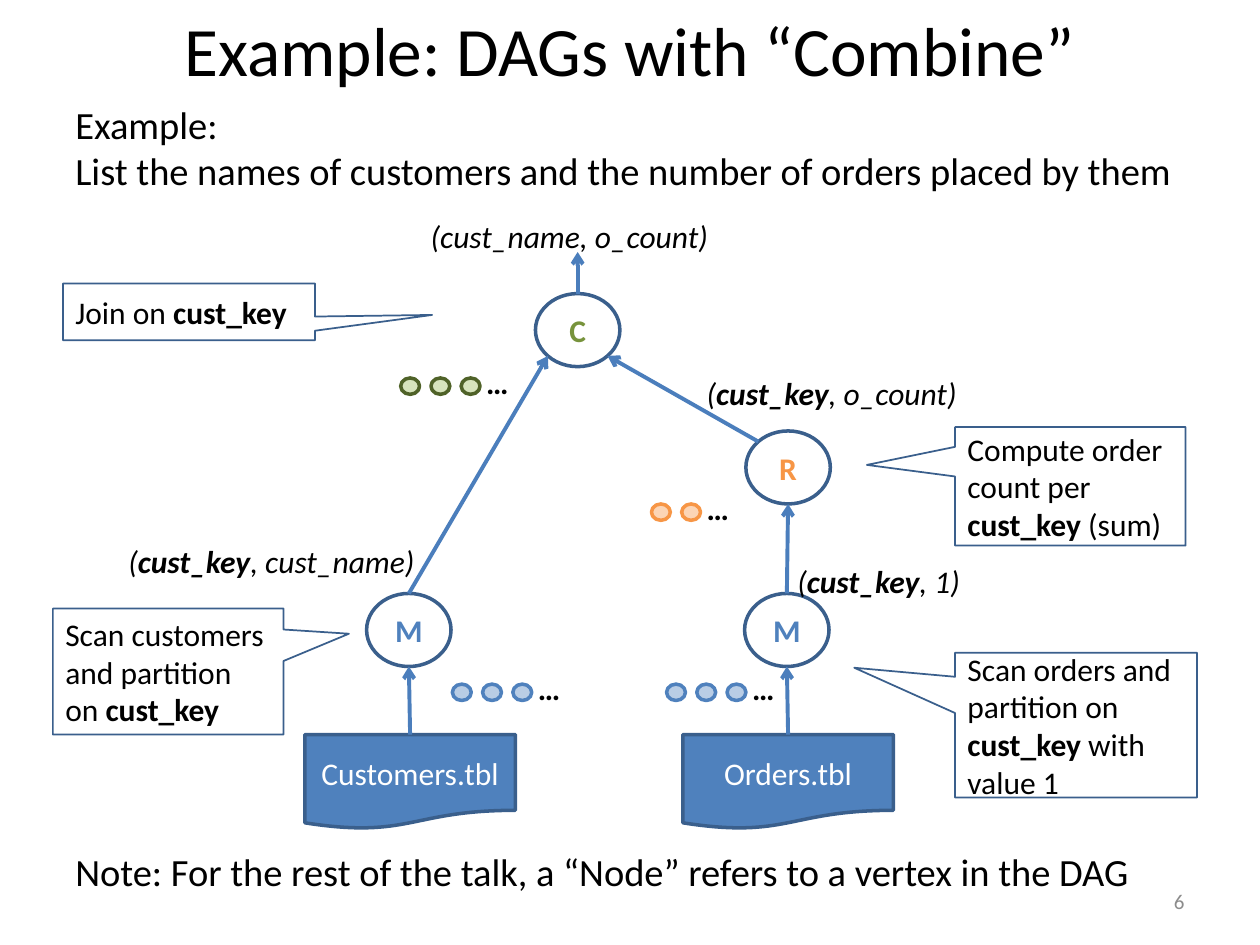
from dataclasses import dataclass
from math import sqrt

from lxml import etree
from pptx import Presentation
from pptx import util as u
from pptx.dml.color import RGBColor
from pptx.enum import shapes, text
from pptx.oxml.ns import qn

PX = 9144  # 100 px to the inch


@dataclass(frozen=True)
class Theme:
    font: str = "Calibri"
    black: str = "000000"
    white: str = "FFFFFF"
    grey: str = "8C8C8C"
    blue: str = "4F81BD"
    pale_blue: str = "B9CDE5"
    outline: str = "3A5F8C"
    arrow: str = "4B7EBC"
    orange: str = "F79646"
    pale_orange: str = "FCD5B5"
    green: str = "77933C"
    dark_green: str = "4F6228"
    pale_green: str = "D7E4BD"
    title_size: float = 39.6
    body_size: float = 22
    label_size: float = 18
    number_size: float = 12


THEME = Theme()

# Runs are (text, style) pairs; style holds "b" for bold and "i" for italic.
KEY = ("cust_key", "b")
ITALIC_KEY = ("cust_key", "bi")

TITLE = "Example: DAGs with “Combine”"
TASK = [
    "Example: ",
    "List the names of customers and the number of orders placed by them",
]
NOTE = "Note: For the rest of the talk, a “Node” refers to a vertex in the DAG"
PAGE_NUMBER = "6"

NODE_SIZE = (67, 58)
NODES = {  # name: (left, top, letter, colour)
    "scan customers": (291, 471, "M", THEME.blue),
    "scan orders": (591, 471, "M", THEME.blue),
    "reduce": (592, 342, "R", THEME.orange),
    "combine": (425, 233, "C", THEME.green),
}
TABLE_TOP, TABLE_SIZE = 583, (167, 75)
TABLES = {"Customers.tbl": 242, "Orders.tbl": 542}
RESULT_TIP = (458.5, 200)

TUPLES = [  # (left, top, width, runs)
    (623, 441, 151, [("(", "i"), ITALIC_KEY, (", 1)", "i")]),
    (92, 425, 250, [("(", "i"), ITALIC_KEY, (", cust_name)", "i")]),
    (551, 292, 221, [("(", "i"), ITALIC_KEY, (", o_count)", "i")]),
    (332, 167, 243, [("(cust_name, o_count)", "i")]),
]
CALLOUTS = [  # (box, tip, runs)
    ((50, 225, 200, 45), (343, 250), [("Join on ", ""), KEY]),
    ((42, 483, 183, 100), (277, 503),
     [("Scan customers and partition on ", ""), KEY]),
    ((758, 518, 192, 115), (678, 530),
     [("Scan orders and partition on ", ""), KEY, (" with value 1", "")]),
    ((758, 339, 183, 94), (688, 369),
     [("Compute order count per ", ""), KEY, (" (sum)", "")]),
]
DOT_SIZE, DOT_PITCH = (15, 13), 24
DOT_ROWS = [  # (left of ellipsis, top of dots, count, fill, line)
    (417, 543, 3, THEME.pale_blue, THEME.blue),
    (587, 543, 3, THEME.pale_blue, THEME.blue),
    (551, 400, 2, THEME.pale_orange, THEME.orange),
    (376, 300, 3, THEME.pale_green, THEME.dark_green),
]


def emu(*lengths):
    return [round(length * PX) for length in lengths]


def add_runs(paragraph, runs, size, color):
    for words, style in runs:
        run = paragraph.add_run()
        run.text = words
        font = run.font
        font.name, font.size = THEME.font, u.Pt(size)
        font.color.rgb = RGBColor.from_string(color)
        font.bold, font.italic = "b" in style, "i" in style


def add_text(parent, box, lines, size=THEME.label_size, color=THEME.black,
             align=text.PP_ALIGN.LEFT, anchor=text.MSO_ANCHOR.TOP, wrap=True):
    """Text box with one list of runs for each line of its paragraph."""
    frame = parent.add_textbox(*emu(*box)).text_frame
    frame.word_wrap, frame.vertical_anchor = wrap, anchor
    paragraph = frame.paragraphs[0]
    paragraph.alignment = align
    for index, runs in enumerate(lines):
        if index:
            paragraph.add_line_break()
        add_runs(paragraph, runs, size, color)


def add_figure(parent, kind, box, fill=None, line=THEME.outline, width=2,
               runs=(), color=THEME.black, align=text.PP_ALIGN.CENTER):
    shape = parent.add_shape(kind, *emu(*box))
    shape.shadow.inherit = False
    if fill:
        shape.fill.solid()
        shape.fill.fore_color.rgb = RGBColor.from_string(fill)
    else:
        shape.fill.background()
    shape.line.color.rgb = RGBColor.from_string(line)
    shape.line.width = u.Pt(width)
    frame = shape.text_frame
    frame.word_wrap, frame.vertical_anchor = True, text.MSO_ANCHOR.MIDDLE
    frame.paragraphs[0].alignment = align
    add_runs(frame.paragraphs[0], runs, THEME.label_size, color)
    return shape


def add_arrow(parent, start, end):
    connector = parent.add_connector(
        shapes.MSO_CONNECTOR.STRAIGHT, *emu(*start, *end))
    connector.line.color.rgb = RGBColor.from_string(THEME.arrow)
    connector.line.width = u.Pt(2.25)
    etree.SubElement(connector.line._get_or_add_ln(), qn("a:tailEnd"), type="arrow")
    etree.SubElement(connector._element.spPr, qn("a:effectLst"))


def add_callout(parent, box, tip, runs):
    callout = add_figure(parent, shapes.MSO_SHAPE.RECTANGULAR_CALLOUT, box,
                         width=1, runs=runs, align=text.PP_ALIGN.LEFT)
    left, top, width, height = box
    callout.adjustments[0] = (tip[0] - left) / width - 0.5
    callout.adjustments[1] = (tip[1] - top) / height - 0.5


def add_dot_row(parent, left, top, count, fill, line):
    group = parent.add_group_shape().shapes
    for index in range(count):
        dot_left = left - 10 - DOT_PITCH * index
        add_figure(group, shapes.MSO_SHAPE.OVAL, (dot_left, top, *DOT_SIZE), fill, line)
    add_text(group, (left, top - 17, 38, 40), [[("…", "b")]], wrap=False)


def node_point(name, across, down):
    """Point on a node's rim in the direction (across, down)."""
    left, top = NODES[name][:2]
    reach = sqrt(across ** 2 + down ** 2)
    width, height = NODE_SIZE
    return (left + width / 2 * (1 + across / reach),
            top + height / 2 * (1 + down / reach))


def table_point(name):
    return TABLES[name] + TABLE_SIZE[0] / 2, TABLE_TOP


def main():
    presentation = Presentation()
    presentation.slide_width, presentation.slide_height = emu(1000, 750)
    slide = presentation.slides.add_slide(presentation.slide_layouts[6])
    canvas = slide.shapes
    middle = text.MSO_ANCHOR.MIDDLE

    add_text(canvas, (50, 0, 900, 78), [[(TITLE, "")]], THEME.title_size,
             align=text.PP_ALIGN.CENTER, anchor=middle)
    add_text(canvas, (50, 75, 900, 84), [[(line, "")] for line in TASK], THEME.body_size)

    for name, left in TABLES.items():
        add_figure(canvas, shapes.MSO_SHAPE.FLOWCHART_DOCUMENT,
                   (left, TABLE_TOP, *TABLE_SIZE), THEME.blue,
                   runs=[(name, "")], color=THEME.white)
    for left, top, letter, color in NODES.values():
        add_figure(canvas, shapes.MSO_SHAPE.OVAL, (left, top, *NODE_SIZE),
                   runs=[(letter, "b")], color=color)

    arrows = [
        (table_point("Orders.tbl"), node_point("scan orders", 0, 1)),
        (node_point("scan orders", 0, -1), node_point("reduce", 0, 1)),
        (node_point("reduce", -1, -1), node_point("combine", 1, 1)),
        (table_point("Customers.tbl"), node_point("scan customers", 0, 1)),
        (node_point("scan customers", 0, -1), node_point("combine", -1, 1)),
        (node_point("combine", 0, -1), RESULT_TIP),
    ]
    for start, end in arrows:
        add_arrow(canvas, start, end)
    for left, top, width, runs in TUPLES:
        add_text(canvas, (left, top, width, 40), [runs], wrap=False)
    for callout in CALLOUTS:
        add_callout(canvas, *callout)
    for row in DOT_ROWS:
        add_dot_row(canvas, *row)

    add_text(canvas, (50, 668, 867, 47), [[(NOTE, "")]], THEME.body_size, wrap=False)
    add_text(canvas, (717, 695, 233, 40), [[(PAGE_NUMBER, "")]], THEME.number_size,
             THEME.grey, text.PP_ALIGN.RIGHT, middle)
    presentation.save("out.pptx")


if __name__ == "__main__":
    main()
